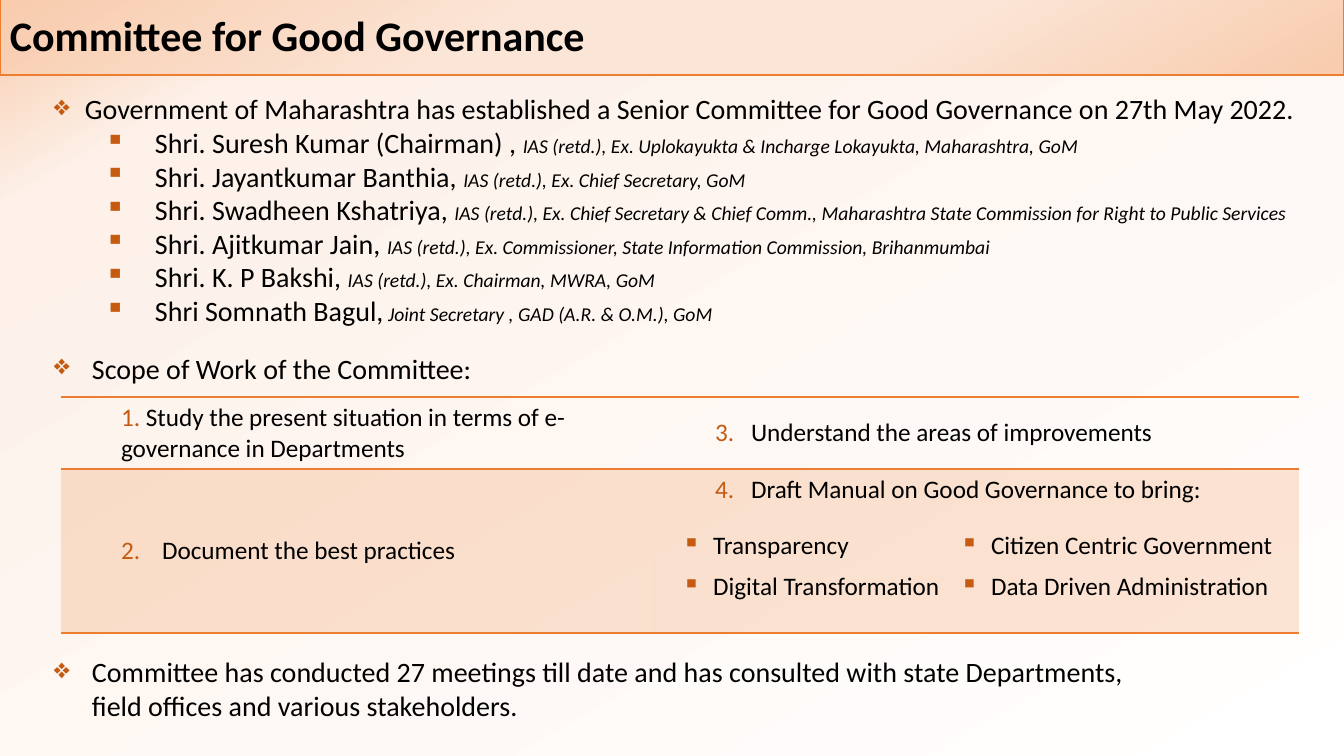
from lxml import etree
from pptx import Presentation
from pptx import util as u
from pptx.dml.color import RGBColor
from pptx.enum import shapes, text
from pptx.oxml import ns

PX = 914400 / 100.8
FACE = "Calibri"
BLACK = RGBColor(0x00, 0x00, 0x00)
RUST = RGBColor(0xC5, 0x5A, 0x11)
ORANGE = RGBColor(0xED, 0x7D, 0x31)
PEACH = RGBColor(0xF8, 0xCB, 0xAD)
CREAM = RGBColor(0xFB, 0xE5, 0xD6)
PALE = RGBColor(0xFD, 0xF1, 0xE9)
WHITE = RGBColor(0xFF, 0xFF, 0xFF)
PLAIN = "{2D5ABB26-0587-4C30-8999-92F81FD0307C}"

MEMBERS = [
    ("Shri. Suresh Kumar (Chairman) , ",
     "IAS (retd.), Ex. Uplokayukta & Incharge Lokayukta, Maharashtra, GoM"),
    ("Shri. Jayantkumar Banthia, ", "IAS (retd.), Ex. Chief Secretary, GoM"),
    ("Shri. Swadheen Kshatriya, ",
     "IAS (retd.), Ex. Chief Secretary & Chief Comm., "
     "Maharashtra State Commission for Right to Public Services"),
    ("Shri. Ajitkumar Jain, ",
     "IAS (retd.), Ex. Commissioner, State Information Commission, Brihanmumbai"),
    ("Shri. K. P Bakshi, ", "IAS (retd.), Ex. Chairman, MWRA, GoM"),
    ("Shri Somnath Bagul,", " Joint Secretary , GAD (A.R. & O.M.), GoM"),
]
SCOPE = [
    [("1.", " Study the present situation in terms of e-governance in Departments", 0),
     ("3.", "\tUnderstand the areas of improvements", 36)],
    [("2.", "\tDocument the best practices", 41),
     ("4.", "\tDraft Manual on Good Governance to bring:", 36)],
]
GOALS = [["Transparency", "Citizen Centric Government"],
         ["Digital Transformation", "Data Driven Administration"]]


def px(n):
    """Turn pixels into EMU."""
    return u.Emu(round(n * PX))


def add(parent, tag, **attrs):
    """Append a DrawingML element."""
    return etree.SubElement(parent, ns.qn("a:" + tag), attrs)


def tint(parent, color):
    """Append a plain colour element."""
    return add(parent, "srgbClr", val=str(color))


def blend(owner, fill, stops):
    """Fill with a linear gradient at 60 degrees."""
    fill.gradient()
    group = next(owner.element.iter(ns.qn("a:gsLst")))
    for old in list(group):
        group.remove(old)
    for at, color in stops:
        tint(add(group, "gs", pos=str(at * 1000)), color)
    next(owner.element.iter(ns.qn("a:lin"))).set("ang", "3600000")


def style(font, size, color=BLACK):
    """Set face, size and colour."""
    font.name, font.size, font.color.rgb = FACE, u.Pt(size), color


def indent(para, left, hang, mark=None):
    """Set a hanging indent and an optional bullet."""
    props = para._p.get_or_add_pPr()
    props.set("marL", str(px(left)))
    props.set("indent", str(-px(hang)))
    if mark:
        tint(add(props, "buClr"), RUST)
        add(props, "buChar", char=mark)


def item(para, words, left, mark, size):
    """Write a bulleted paragraph in one style."""
    para.text = words
    indent(para, left, left, mark)
    style(para.font, size)


def title(slide, x, y, w, h):
    """Draw the title band."""
    band = slide.shapes.add_shape(
        shapes.MSO_SHAPE.RECTANGLE, px(x), px(y), px(w), px(h))
    band.shadow.inherit = False
    blend(band, band.fill, [(0, PEACH), (38, CREAM), (67, CREAM), (100, PEACH)])
    band.line.color.rgb, band.line.width = ORANGE, u.Pt(1)
    frame = band.text_frame
    frame.vertical_anchor = text.MSO_ANCHOR.MIDDLE
    para = frame.paragraphs[0]
    para.text = "Committee for Good Governance"
    para.alignment = text.PP_ALIGN.LEFT
    style(para.font, 30)
    para.font.bold = True


def body(slide, x, y, w, h):
    """Write the bulleted text with its list of members."""
    frame = slide.shapes.add_textbox(px(x), px(y), px(w), px(h)).text_frame
    frame.word_wrap = True
    item(frame.paragraphs[0], "Government of Maharashtra has established a Senior "
         "Committee for Good Governance on 27th May 2022.", 31, "❖", 20)
    for name, post in MEMBERS:
        para = frame.add_paragraph()
        para.level = 1
        indent(para, 101, 50, "▪")
        for words, size in ((name, 20), (post, 14)):
            run = para.add_run()
            run.text = words
            style(run.font, size)
            run.font.italic = size == 14
    for words, gap in (
            ("Scope of Work of the Committee:", 17),
            ("Committee has conducted 27 meetings till date and has consulted with "
             "state Departments,\vfield offices and various stakeholders.", 193)):
        para = frame.add_paragraph()
        item(para, words, 38, "❖", 20)
        para.space_before = u.Pt(gap)


def grid(slide, x, y, cols, rows):
    """Add a bare table and return it."""
    holder = slide.shapes.add_table(
        len(rows), len(cols), px(x), px(y), px(sum(cols)), px(sum(rows)))
    next(holder.element.iter(ns.qn("a:tableStyleId"))).text = PLAIN
    table = holder.table
    table.first_row = table.horz_banding = False
    for col, wide in zip(table.columns, cols):
        col.width = px(wide)
    for row, high in zip(table.rows, rows):
        row.height = px(high)
    for cell in table.iter_cells():
        cell.fill.background()
    return table


def rule(cell):
    """Draw the top and bottom borders of a cell."""
    props = cell._tc.get_or_add_tcPr()
    for at, side in enumerate(("lnT", "lnB")):
        line = add(props, side, w=str(u.Pt(1)))
        tint(add(line, "solidFill"), ORANGE)
        props.insert(at, line)


def scope(slide, x, y):
    """Draw the table of tasks."""
    table = grid(slide, x, y, [594, 644], [72, 164])
    for r, row in enumerate(SCOPE):
        for c, (mark, words, hang) in enumerate(row):
            cell = table.cell(r, c)
            cell.vertical_anchor = (text.MSO_ANCHOR.TOP if r and c
                                    else text.MSO_ANCHOR.MIDDLE)
            if r:
                cell.fill.solid()
                cell.fill.fore_color.rgb = ORANGE
                shade = next(cell._tc.tcPr.iter(ns.qn("a:srgbClr")))
                add(shade, "alpha", val="20000")
            rule(cell)
            para = cell.text_frame.paragraphs[0]
            para.level = 1
            indent(para, 50 + hang, hang)
            for part, color in ((mark, RUST), (words, BLACK)):
                run = para.add_run()
                run.text = part
                style(run.font, 18, color)


def goals(slide, x, y):
    """Draw the table of goals of the manual."""
    table = grid(slide, x, y, [278, 361], [41, 41])
    for r, row in enumerate(GOALS):
        for c, words in enumerate(row):
            item(table.cell(r, c).text_frame.paragraphs[0], words, 31, "▪", 18)


def main():
    """Build and save the slide."""
    deck = Presentation()
    deck.slide_width, deck.slide_height = px(1344), px(756)
    slide = deck.slides.add_slide(deck.slide_layouts[6])
    blend(slide, slide.background.fill, [(0, PEACH), (14, PALE), (100, WHITE)])
    title(slide, 0, -5, 1344, 80)
    body(slide, 44, 87, 1276, 646)
    scope(slide, 61, 397)
    goals(slide, 672, 525)
    deck.save("out.pptx")


if __name__ == "__main__":
    main()
